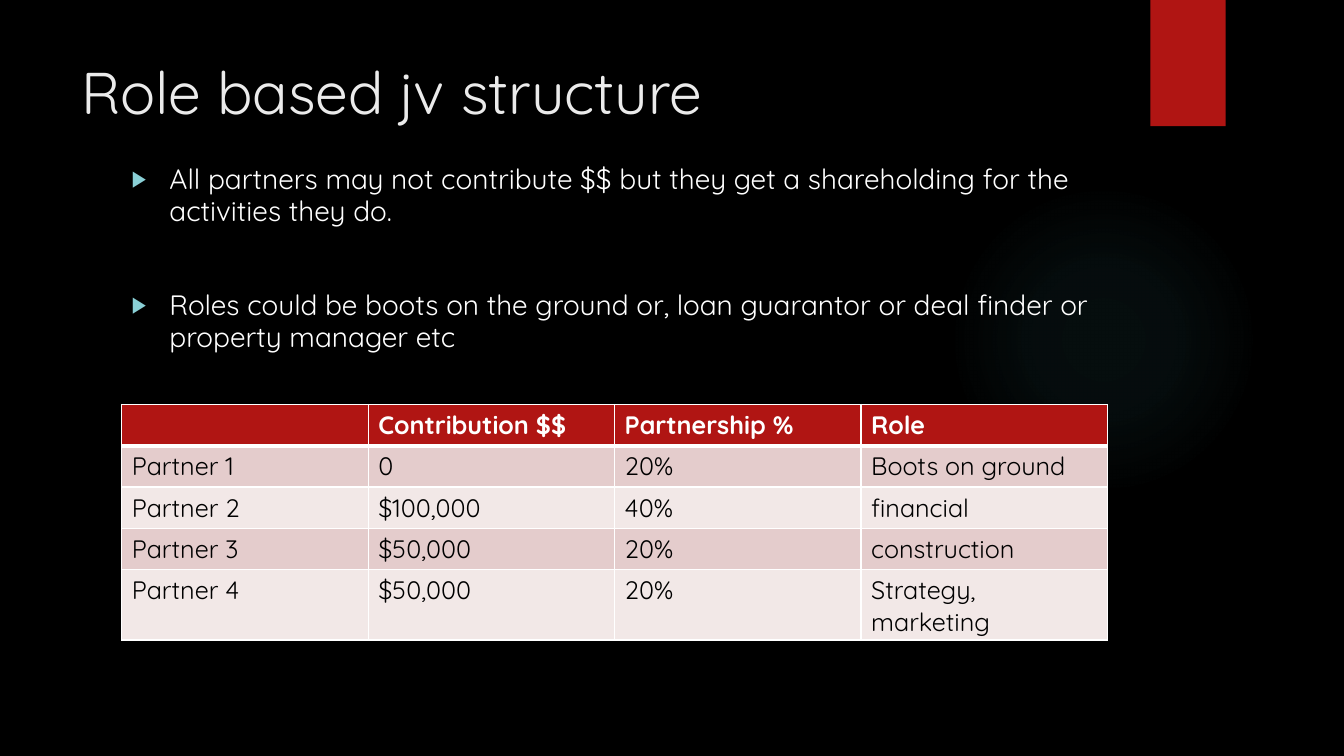
from lxml.etree import SubElement
from pptx import Presentation
from pptx.dml.color import RGBColor
from pptx.enum.shapes import MSO_SHAPE
from pptx.enum.text import MSO_ANCHOR, MSO_AUTO_SIZE, PP_ALIGN
from pptx.oxml import parse_xml
from pptx.oxml.ns import nsdecls, qn
from pptx.util import Cm, Pt

FONT = "Quicksand"
RED = "B01513"
WHITE = "FFFFFF"
BANDS = ("E4CCCC", "F2E8E7")
POINTS = (
    "All partners may not contribute $$ but they get a shareholding for the activities they do.",
    "Roles could be boots on the ground or, loan guarantor or deal finder or property manager etc",
)
PARTNERS = (
    ("", "Contribution $$", "Partnership %", "Role"),
    ("Partner 1", "0", "20%", "Boots on ground"),
    ("Partner 2", "$100,000", "40%", "financial"),
    ("Partner 3", "$50,000", "20%", "construction"),
    ("Partner 4", "$50,000", "20%", "Strategy, marketing"),
)


def rgb(value):
    """Turn a hex string into a colour."""
    return RGBColor.from_string(value)


def write(paragraph, text, size=18, color=WHITE, bold=False):
    """Fill a paragraph with formatted, left-aligned text."""
    paragraph.alignment = PP_ALIGN.LEFT
    run = paragraph.add_run()
    run.text = text
    run.font.name = FONT
    run.font.size = Pt(size)
    run.font.bold = bold
    run.font.color.rgb = rgb(color)


def add_plain_shape(slide, kind, box):
    """Add a preset shape without line or shadow."""
    shape = slide.shapes.add_shape(kind, *map(Cm, box))
    shape.shadow.inherit = False
    shape.line.fill.background()
    return shape


def add_backdrop(slide, glow_box, ribbon_box):
    """Paint the black background, the faint glow and the red ribbon."""
    slide.background.fill.solid()
    slide.background.fill.fore_color.rgb = rgb("000000")

    glow = add_plain_shape(slide, MSO_SHAPE.OVAL, glow_box)
    stops = "".join(
        f'<a:gs pos="{position * 1000}"><a:srgbClr val="50B9C1">'
        f'<a:alpha val="{opacity * 1000}"/></a:srgbClr></a:gs>'
        for position, opacity in ((0, 7), (36, 6), (69, 0))
    )
    gradient = parse_xml(
        f'<a:gradFill {nsdecls("a")}><a:gsLst>{stops}</a:gsLst><a:path path="circle">'
        '<a:fillToRect l="50000" t="50000" r="50000" b="50000"/></a:path></a:gradFill>'
    )
    glow.element.spPr.find(qn("a:prstGeom")).addnext(gradient)

    ribbon = add_plain_shape(slide, MSO_SHAPE.RECTANGLE, ribbon_box)
    ribbon.fill.solid()
    ribbon.fill.fore_color.rgb = rgb(RED)


def add_title(slide, box):
    """Place and format the slide title."""
    title = slide.shapes.title
    title.left, title.top, title.width, title.height = map(Cm, box)
    title.text_frame.word_wrap = True
    title.text_frame.auto_size = MSO_AUTO_SIZE.NONE
    title.text_frame.vertical_anchor = MSO_ANCHOR.TOP
    write(title.text_frame.paragraphs[0], "Role based jv structure", size=42, color="EBEBEB")


def add_points(slide, box):
    """List the points with triangular bullets."""
    frame = slide.shapes.add_textbox(*map(Cm, box)).text_frame
    frame.word_wrap = True
    for index, point in enumerate(POINTS):
        paragraph = frame.add_paragraph() if index else frame.paragraphs[0]
        properties = paragraph._p.get_or_add_pPr()
        properties.set("marL", str(Cm(0.95)))
        properties.set("indent", str(Cm(-0.95)))
        bullet_color = SubElement(properties, qn("a:buClr"))
        SubElement(bullet_color, qn("a:srgbClr"), val="8AD0D6")
        SubElement(properties, qn("a:buSzPct"), val="80000")
        SubElement(properties, qn("a:buFont"), typeface="Arial")
        SubElement(properties, qn("a:buChar"), char="▶")
        paragraph.line_spacing = 0.95
        if index:
            paragraph.space_before = Pt(44)
        write(paragraph, point, size=20)


def add_borders(cell, top, bottom):
    """Draw white borders, with the top and bottom widths in points."""
    properties = cell._tc.get_or_add_tcPr()
    for side, width in (("L", 1), ("R", 1), ("T", top), ("B", bottom)):
        line = SubElement(properties, qn(f"a:ln{side}"), w=str(Pt(width)))
        fill = SubElement(line, qn("a:solidFill"))
        SubElement(fill, qn("a:srgbClr"), val=WHITE)


def add_partner_table(slide, box):
    """Set out each partner's contribution, share and role."""
    table = slide.shapes.add_table(len(PARTNERS), len(PARTNERS[0]), *map(Cm, box)).table
    for row, partner in enumerate(PARTNERS):
        header = row == 0
        for column, text in enumerate(partner):
            cell = table.cell(row, column)
            add_borders(cell, top=3 if row == 1 else 1, bottom=3 if header else 1)
            cell.fill.solid()
            cell.fill.fore_color.rgb = rgb(RED if header else BANDS[(row - 1) % 2])
            if text:
                write(cell.text_frame.paragraphs[0], text,
                      color=WHITE if header else "000000", bold=header)


def main():
    """Build and save the slide."""
    presentation = Presentation()
    presentation.slide_width, presentation.slide_height = Cm(33.87), Cm(19.05)
    slide = presentation.slides.add_slide(presentation.slide_layouts[5])
    add_backdrop(slide, glow_box=(23.9, 4.65, 7.82, 7.82), ribbon_box=(28.99, 0, 1.9, 3.18))
    add_title(slide, (1.8, 1.27, 26.14, 3.89))
    add_points(slide, (3.07, 4.01, 24.84, 5.51))
    add_partner_table(slide, (3.07, 10.19, 24.84, 5.2))
    presentation.save("out.pptx")


if __name__ == "__main__":
    main()
